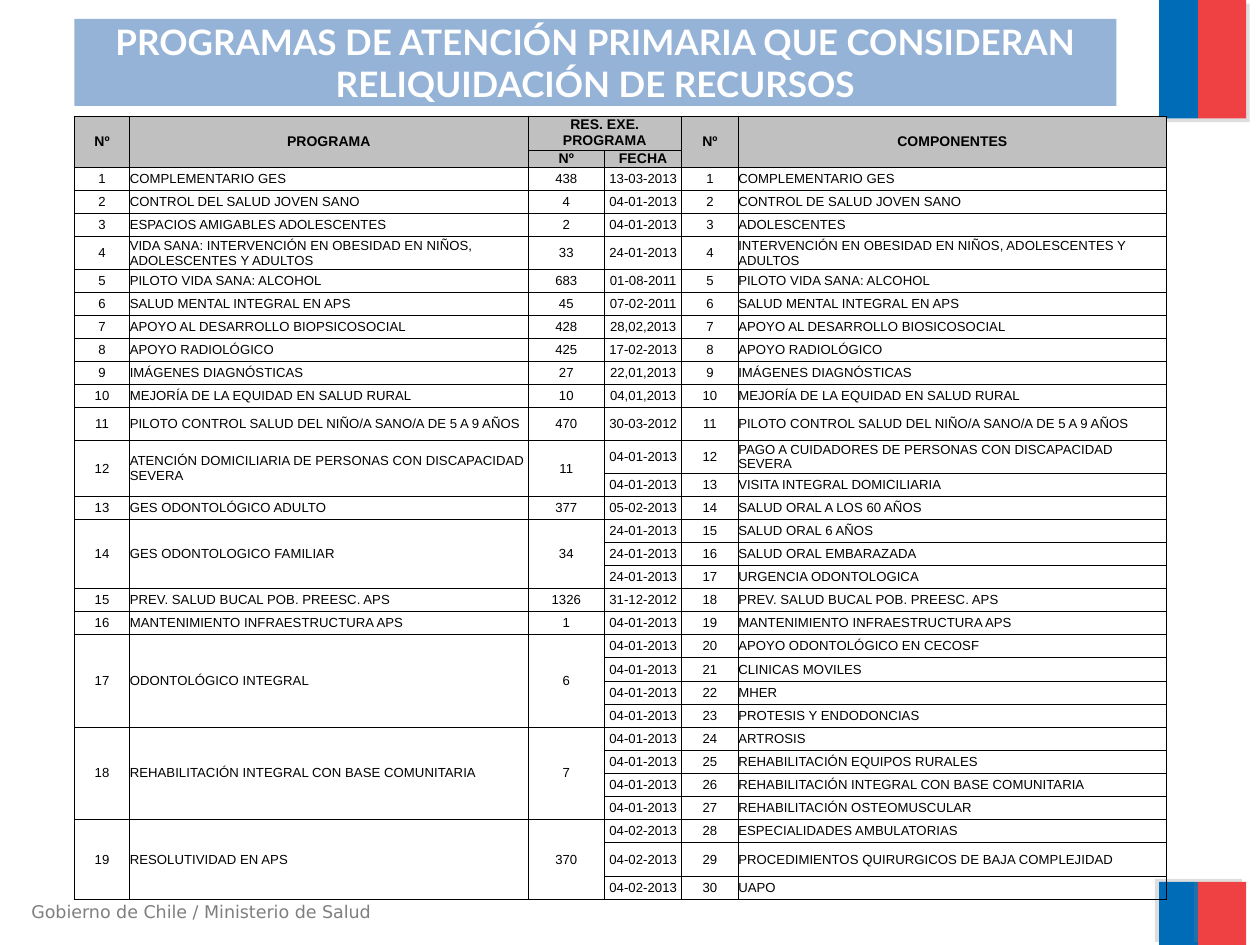
from lxml.etree import SubElement
from pptx import Presentation
from pptx.dml.color import RGBColor
from pptx.enum.shapes import MSO_SHAPE
from pptx.enum.text import MSO_ANCHOR, PP_ALIGN
from pptx.oxml.ns import qn
from pptx.util import Inches, Pt

TITLE = "PROGRAMAS DE ATENCIÓN PRIMARIA QUE CONSIDERAN RELIQUIDACIÓN DE RECURSOS"
FOOTER = "Gobierno de Chile / Ministerio de Salud"
BLUE, RED = "006CB7", "EF4144"

TITLE_FORMAT = {"size": Pt(20), "name": "Lato", "bold": True}
FOOTER_FORMAT = {"size": Pt(10), "name": "DejaVu Sans"}
HEAD_FORMAT = {"size": Pt(8), "name": "Arial", "bold": True}
BODY_FORMAT = {"size": Pt(7.5), "name": "Arial", "bold": False}

COLUMNS = [0.44, 3.16, 0.61, 0.61, 0.45, 3.4]
TABLE_HEIGHT = 6.22
SPECIAL_ROWS = {0: 0.27, 1: 0.14, 5: 0.26, 12: 0.26, 13: 0.26, 30: 0.27}
HEADINGS = [
    (0, 0, 1, 0, "Nº"),
    (0, 1, 1, 1, "PROGRAMA"),
    (0, 2, 0, 3, "RES. EXE. PROGRAMA"),
    (1, 2, 1, 2, "Nº"),
    (1, 3, 1, 3, "FECHA"),
    (0, 4, 1, 4, "Nº"),
    (0, 5, 1, 5, "COMPONENTES"),
]
PROGRAMS = [
    ("COMPLEMENTARIO GES", 438, [("13-03-2013", "COMPLEMENTARIO GES")]),
    ("CONTROL DEL SALUD JOVEN SANO", 4, [("04-01-2013", "CONTROL DE SALUD JOVEN SANO")]),
    ("ESPACIOS AMIGABLES ADOLESCENTES", 2, [("04-01-2013", "ADOLESCENTES")]),
    ("VIDA SANA: INTERVENCIÓN EN OBESIDAD EN NIÑOS, ADOLESCENTES Y ADULTOS", 33,
     [("24-01-2013", "INTERVENCIÓN EN OBESIDAD EN NIÑOS, ADOLESCENTES Y ADULTOS")]),
    ("PILOTO VIDA SANA: ALCOHOL", 683, [("01-08-2011", "PILOTO VIDA SANA: ALCOHOL")]),
    ("SALUD MENTAL INTEGRAL EN APS", 45, [("07-02-2011", "SALUD MENTAL INTEGRAL EN APS")]),
    ("APOYO AL DESARROLLO BIOPSICOSOCIAL", 428,
     [("28,02,2013", "APOYO AL DESARROLLO BIOSICOSOCIAL")]),
    ("APOYO RADIOLÓGICO", 425, [("17-02-2013", "APOYO RADIOLÓGICO")]),
    ("IMÁGENES DIAGNÓSTICAS", 27, [("22,01,2013", "IMÁGENES DIAGNÓSTICAS")]),
    ("MEJORÍA DE LA EQUIDAD EN SALUD RURAL", 10,
     [("04,01,2013", "MEJORÍA DE LA EQUIDAD EN SALUD RURAL")]),
    ("PILOTO CONTROL SALUD DEL NIÑO/A SANO/A DE 5 A 9 AÑOS", 470,
     [("30-03-2012", "PILOTO CONTROL SALUD DEL NIÑO/A SANO/A DE 5 A 9 AÑOS")]),
    ("ATENCIÓN DOMICILIARIA DE PERSONAS CON DISCAPACIDAD SEVERA", 11,
     [("04-01-2013", "PAGO A CUIDADORES DE PERSONAS CON DISCAPACIDAD SEVERA"),
      ("04-01-2013", "VISITA INTEGRAL DOMICILIARIA")]),
    ("GES ODONTOLÓGICO ADULTO", 377, [("05-02-2013", "SALUD ORAL A LOS 60 AÑOS")]),
    ("GES ODONTOLOGICO FAMILIAR", 34,
     [("24-01-2013", "SALUD ORAL 6 AÑOS"),
      ("24-01-2013", "SALUD ORAL EMBARAZADA"),
      ("24-01-2013", "URGENCIA ODONTOLOGICA")]),
    ("PREV. SALUD BUCAL POB. PREESC. APS", 1326,
     [("31-12-2012", "PREV. SALUD BUCAL POB. PREESC. APS")]),
    ("MANTENIMIENTO INFRAESTRUCTURA APS", 1,
     [("04-01-2013", "MANTENIMIENTO INFRAESTRUCTURA APS")]),
    ("ODONTOLÓGICO INTEGRAL", 6,
     [("04-01-2013", "APOYO ODONTOLÓGICO EN CECOSF"),
      ("04-01-2013", "CLINICAS MOVILES"),
      ("04-01-2013", "MHER"),
      ("04-01-2013", "PROTESIS Y ENDODONCIAS")]),
    ("REHABILITACIÓN INTEGRAL CON BASE COMUNITARIA", 7,
     [("04-01-2013", "ARTROSIS"),
      ("04-01-2013", "REHABILITACIÓN EQUIPOS RURALES"),
      ("04-01-2013", "REHABILITACIÓN INTEGRAL CON BASE COMUNITARIA"),
      ("04-01-2013", "REHABILITACIÓN OSTEOMUSCULAR")]),
    ("RESOLUTIVIDAD EN APS", 370,
     [("04-02-2013", "ESPECIALIDADES AMBULATORIAS"),
      ("04-02-2013", "PROCEDIMIENTOS QUIRURGICOS DE BAJA COMPLEJIDAD"),
      ("04-02-2013", "UAPO")]),
]


def paint(target, color):
    target.solid()
    target.fore_color.rgb = RGBColor.from_string(color)


def write(frame, text, text_format, color, alignment=PP_ALIGN.LEFT):
    paragraph = frame.paragraphs[0]
    paragraph.alignment = alignment
    span = paragraph.add_run()
    span.text = text
    for name, value in text_format.items():
        setattr(span.font, name, value)
    paint(span.font.fill, color)


def add_block(page, place, color):
    block = page.shapes.add_shape(MSO_SHAPE.RECTANGLE, *map(Inches, place))
    block.shadow.inherit = False
    paint(block.fill, color)
    block.line.fill.background()
    return block


def add_band(page, place, color, shadow_angle):
    band = add_block(page, place, color)
    effects = band.element.spPr.find(qn("a:effectLst"))
    shadow = SubElement(effects, qn("a:outerShdw"), blurRad="0", dist=str(Pt(3)),
                        dir=str(shadow_angle * 60000), algn="ctr", rotWithShape="0")
    shade = SubElement(shadow, qn("a:srgbClr"), val="808080")
    SubElement(shade, qn("a:alpha"), val="25000")


def add_title(page):
    box = add_block(page, (0.59, 0.15, 8.27, 0.69), "95B3D7")
    box.text_frame.word_wrap = True
    box.text_frame.vertical_anchor = MSO_ANCHOR.MIDDLE
    write(box.text_frame, TITLE, TITLE_FORMAT, "FFFFFF", PP_ALIGN.CENTER)


def add_footer(page):
    box = page.shapes.add_textbox(*map(Inches, (0.15, 7.1, 3.02, 0.27)))
    box.text_frame.word_wrap = True
    write(box.text_frame, FOOTER, FOOTER_FORMAT, "7F7F7F")


def style_cell(cell, is_heading):
    for side in ("left", "right", "top", "bottom"):
        setattr(cell, f"margin_{side}", 0)
    cell.vertical_anchor = MSO_ANCHOR.MIDDLE
    properties = cell._tc.get_or_add_tcPr()
    for edge in ("lnL", "lnR", "lnT", "lnB"):
        line = SubElement(properties, qn(f"a:{edge}"), w=str(Pt(0.5)))
        fill = SubElement(line, qn("a:solidFill"))
        SubElement(fill, qn("a:srgbClr"), val="000000")
    if is_heading:
        paint(cell.fill, "C0C0C0")
    else:
        cell.fill.background()


def fill_cells(table, top, left, bottom, right, text, text_format, alignment=PP_ALIGN.CENTER):
    cell = table.cell(top, left)
    if (top, left) != (bottom, right):
        cell.merge(table.cell(bottom, right))
    write(cell.text_frame, str(text), text_format, "000000", alignment)


def fill_programs(table):
    row = 2
    for number, (program, resolution, components) in enumerate(PROGRAMS, 1):
        last = row + len(components) - 1
        fill_cells(table, row, 0, last, 0, number, BODY_FORMAT)
        fill_cells(table, row, 1, last, 1, program, BODY_FORMAT, PP_ALIGN.LEFT)
        fill_cells(table, row, 2, last, 2, resolution, BODY_FORMAT)
        for line, (date, component) in enumerate(components, row):
            fill_cells(table, line, 3, line, 3, date, BODY_FORMAT)
            fill_cells(table, line, 4, line, 4, line - 1, BODY_FORMAT)
            fill_cells(table, line, 5, line, 5, component, BODY_FORMAT, PP_ALIGN.LEFT)
        row = last + 1


def add_program_table(page):
    row_count = 2 + sum(len(components) for _, _, components in PROGRAMS)
    place = (0.59, 0.92, sum(COLUMNS), TABLE_HEIGHT)
    table = page.shapes.add_table(row_count, len(COLUMNS), *map(Inches, place)).table
    table.first_row = table.horz_banding = False
    for column, width in zip(table.columns, COLUMNS):
        column.width = Inches(width)
    regular = (TABLE_HEIGHT - sum(SPECIAL_ROWS.values())) / (row_count - len(SPECIAL_ROWS))
    for index, row in enumerate(table.rows):
        row.height = Inches(SPECIAL_ROWS.get(index, regular))
        for cell in row.cells:
            style_cell(cell, index < 2)
    for heading in HEADINGS:
        fill_cells(table, *heading, HEAD_FORMAT)
    fill_programs(table)


def main():
    deck = Presentation()
    deck.slide_width, deck.slide_height = Inches(10), Inches(7.5)
    page = deck.slides.add_slide(deck.slide_layouts[6])
    for top, height, angle in ((0, 0.94, 45), (7, 0.5, 215)):
        add_band(page, (9.2, top, 0.31, height), BLUE, angle)
        add_band(page, (9.51, top, 0.38, height), RED, angle)
    add_footer(page)
    add_title(page)
    add_program_table(page)
    deck.save("out.pptx")


if __name__ == "__main__":
    main()
